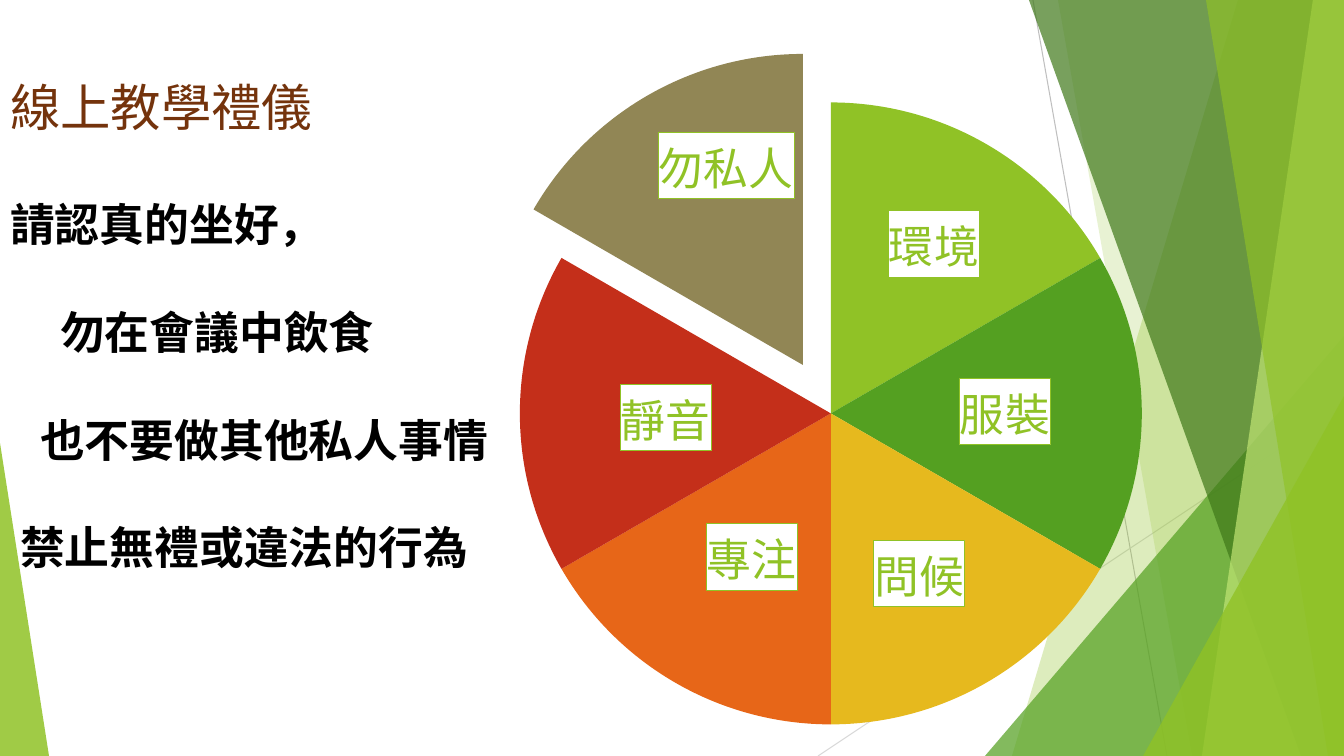
from lxml.etree import SubElement
from pptx import Presentation
from pptx.chart.data import CategoryChartData
from pptx.dml.color import RGBColor
from pptx.enum.chart import XL_CHART_TYPE, XL_LABEL_POSITION
from pptx.enum.shapes import MSO_CONNECTOR, MSO_SHAPE
from pptx.enum.text import MSO_ANCHOR, MSO_AUTO_SIZE, PP_ALIGN
from pptx.oxml import parse_xml
from pptx.oxml.ns import nsdecls, qn
from pptx.util import Emu, Pt

WIDTH, HEIGHT = 1344, 756
SCALE = 12192000 / WIDTH
FONT = "Lato"
COLORS = {
    "lime": "90C226", "green": "54A021", "forest": "3F7819", "pale": "C0E474",
    "yellow": "E6B91E", "orange": "E76618", "red": "C42F1A", "olive": "918655",
    "brown": "74330C", "black": "000000", "white": "FFFFFF",
    "gray": "BFBFBF", "silver": "D9D9D9",
}


def px(length):
    return Emu(round(length * SCALE))


def color(name):
    return RGBColor.from_string(COLORS[name])


def layout_xml(inner=False, **fractions):
    target = '<c:layoutTarget val="inner"/><c:xMode val="edge"/><c:yMode val="edge"/>' if inner else ""
    values = "".join(f'<c:{key} val="{value:.3f}"/>' for key, value in fractions.items())
    return parse_xml(f'<c:layout {nsdecls("c")}><c:manualLayout>{target}{values}</c:manualLayout></c:layout>')


class SlideBuilder:
    def __init__(self, presentation):
        self.slide = presentation.slides.add_slide(presentation.slide_layouts[5])
        self.shapes = self.slide.shapes

    def line(self, start, end, stroke):
        connector = self.shapes.add_connector(MSO_CONNECTOR.STRAIGHT, *map(px, start + end))
        connector.line.color.rgb = color(stroke)
        connector.line.width = Pt(0.75)
        SubElement(connector._element.spPr, qn("a:effectLst"))

    def paint(self, shape, fill, opacity):
        shape.shadow.inherit = False
        shape.line.fill.background()
        shape.fill.solid()
        shape.fill.fore_color.rgb = color(fill)
        tint = shape._element.spPr.find(qn("a:solidFill"))[0]
        SubElement(tint, qn("a:alpha"), val=str(opacity * 1000))

    def facet(self, top_x, bottom_x, fill, opacity):
        builder = self.shapes.build_freeform(top_x, 0, scale=SCALE)
        builder.add_line_segments([(WIDTH, 0), (WIDTH, HEIGHT), (bottom_x, HEIGHT)])
        self.paint(builder.convert_to_shape(), fill, opacity)

    def triangle(self, left, top, width, apex, fill, opacity):
        shape = self.shapes.add_shape(
            MSO_SHAPE.ISOSCELES_TRIANGLE, px(left), px(top), px(width), px(HEIGHT - top))
        shape.adjustments[0] = apex
        self.paint(shape, fill, opacity)

    def pie(self, left, top, width, height, slices, plot_layout, exploded):
        data = CategoryChartData()
        data.categories = [name for name, *_ in slices]
        data.add_series("Series 1", [17] * len(slices))
        chart = self.shapes.add_chart(
            XL_CHART_TYPE.PIE, px(left), px(top), px(width), px(height), data).chart
        chart.has_title = False
        chart.has_legend = False
        chart.font.name = FONT
        chart.font.size = Pt(10)
        chart.font.color.rgb = color("black")
        chart.plots[0].vary_by_categories = False
        plot_area = chart._chartSpace.find(".//" + qn("c:plotArea"))
        for existing in plot_area.findall(qn("c:layout")):
            plot_area.remove(existing)
        plot_area.insert(0, layout_xml(True, **plot_layout))
        series = chart.plots[0].series[0]
        for index, (name, fill, shift_x, shift_y) in enumerate(slices):
            point = series.points[index]
            point.format.fill.solid()
            point.format.fill.fore_color.rgb = color(fill)
            point.format.line.fill.background()
            self.pie_label(point.data_label, name)
            label = series._element.findall(".//" + qn("c:dLbl"))[index]
            label.find(qn("c:idx")).addnext(layout_xml(x=shift_x / width, y=shift_y / height))
            label.find(qn("c:tx")).addnext(parse_xml(
                f'<c:spPr {nsdecls("c", "a")}>'
                f'<a:solidFill><a:srgbClr val="{COLORS["white"]}"/></a:solidFill>'
                f'<a:ln w="9525"><a:solidFill><a:srgbClr val="{COLORS["lime"]}"/></a:solidFill></a:ln>'
                '</c:spPr>'))
        last_point = series._element.findall(qn("c:dPt"))[-1]
        last_point.find(qn("c:spPr")).addprevious(
            parse_xml(f'<c:explosion {nsdecls("c")} val="{exploded}"/>'))

    def pie_label(self, label, name):
        label.text_frame.text = name
        font = label.text_frame.paragraphs[0].runs[0].font
        font.name = FONT
        font.size = Pt(32)
        font.color.rgb = color("lime")
        label.position = XL_LABEL_POSITION.CENTER

    def title(self, left, top, width, height, lines):
        title = self.shapes.title
        title.left, title.top, title.width, title.height = map(px, (left, top, width, height))
        frame = title.text_frame
        frame.text = "\n".join(text for text, *_ in lines)
        frame.word_wrap = True
        frame.auto_size = MSO_AUTO_SIZE.NONE
        frame.vertical_anchor = MSO_ANCHOR.TOP
        frame.margin_top = 0
        frame.margin_left = px(10)
        for paragraph, (_, indent, spacing, size, fill, bold) in zip(frame.paragraphs, lines):
            paragraph.alignment = PP_ALIGN.LEFT
            paragraph.line_spacing = Pt(spacing)
            paragraph._p.get_or_add_pPr().set("marL", str(px(indent)))
            font = paragraph.runs[0].font
            font.name = FONT
            font.size = Pt(size)
            font.bold = bold
            font.color.rgb = color(fill)
        self.shapes._spTree.append(title._element)


def main():
    presentation = Presentation()
    presentation.slide_width, presentation.slide_height = px(WIDTH), px(HEIGHT)
    builder = SlideBuilder(presentation)

    builder.line((1033, 0), (1167, HEIGHT), "gray")
    builder.line((WIDTH, 406), (818, HEIGHT), "silver")
    builder.facet(1238, 1012, "lime", 30)
    builder.facet(1058, 1192, "lime", 20)
    builder.triangle(985, 336, 359, 1, "green", 72)
    builder.facet(1029, 1301, "forest", 70)
    builder.facet(1313, 1202, "pale", 70)
    builder.facet(1206, 1328, "lime", 65)
    builder.triangle(1143, 396, 201, 1, "lime", 80)
    builder.triangle(0, 443, 49, 0, "lime", 85)

    slices = [
        ("環境", "lime", 26, -35),
        ("服裝", "green", 19, -2),
        ("問候", "yellow", 11, 25),
        ("專注", "orange", -1, 9),
        ("靜音", "red", -10, 4),
        ("勿私人", "olive", 1, -65),
    ]
    plot_layout = {"x": 0.351, "y": 0.087, "w": 0.463, "h": 0.768}
    builder.pie(48, 32, 1344, 810, slices, plot_layout, exploded=18)

    body = (32, "black", True)
    builder.title(0, 67, 1022, 673, [
        ("線上教學禮儀", 0, 50, 36, "brown", False),
        ("請認真的坐好，", 0, 81, *body),
        ("勿在會議中飲食", 50, 77, *body),
        ("也不要做其他私人事情", 30, 77, *body),
        ("禁止無禮或違法的行為", 10, 77, *body),
    ])
    presentation.save("out.pptx")


if __name__ == "__main__":
    main()
